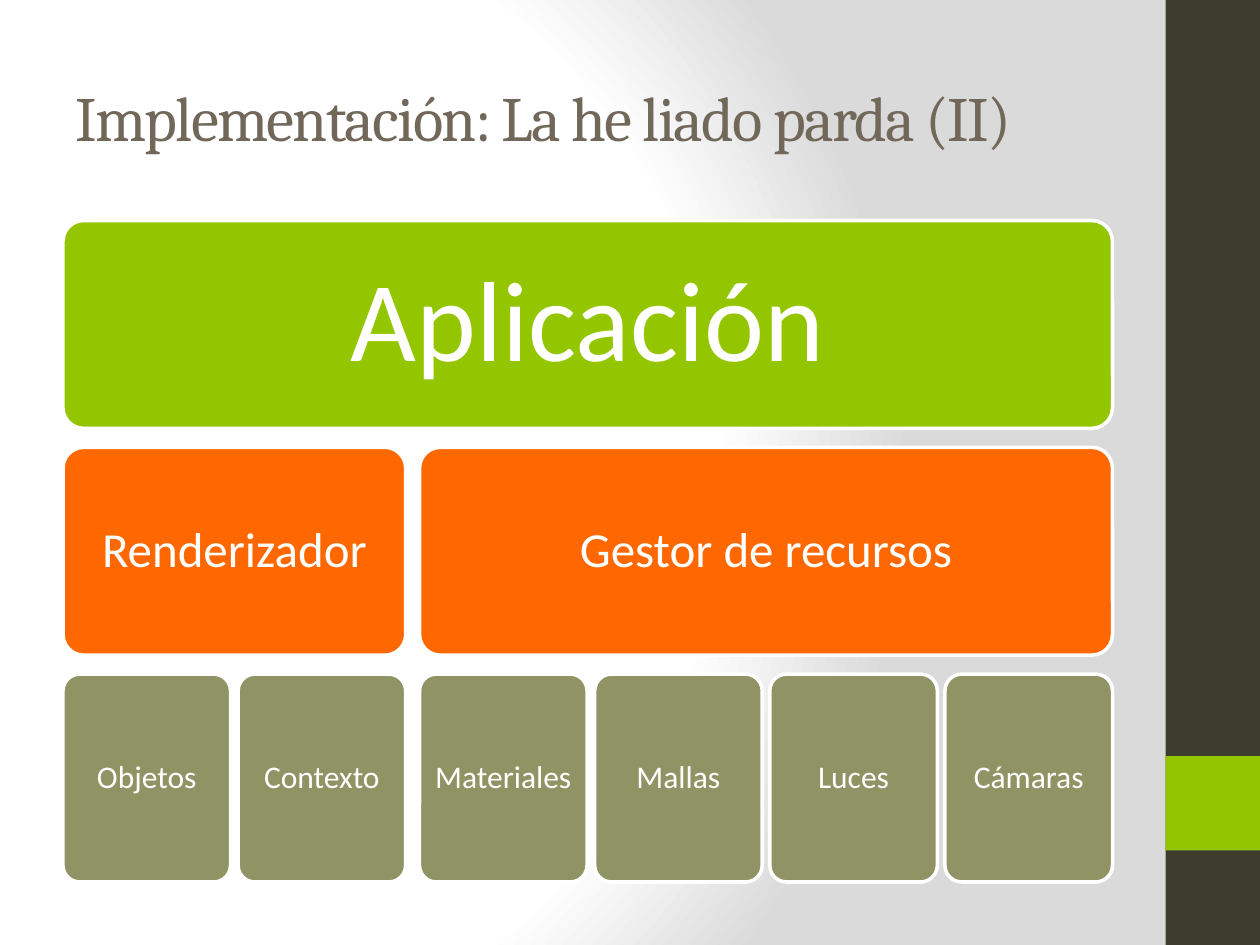
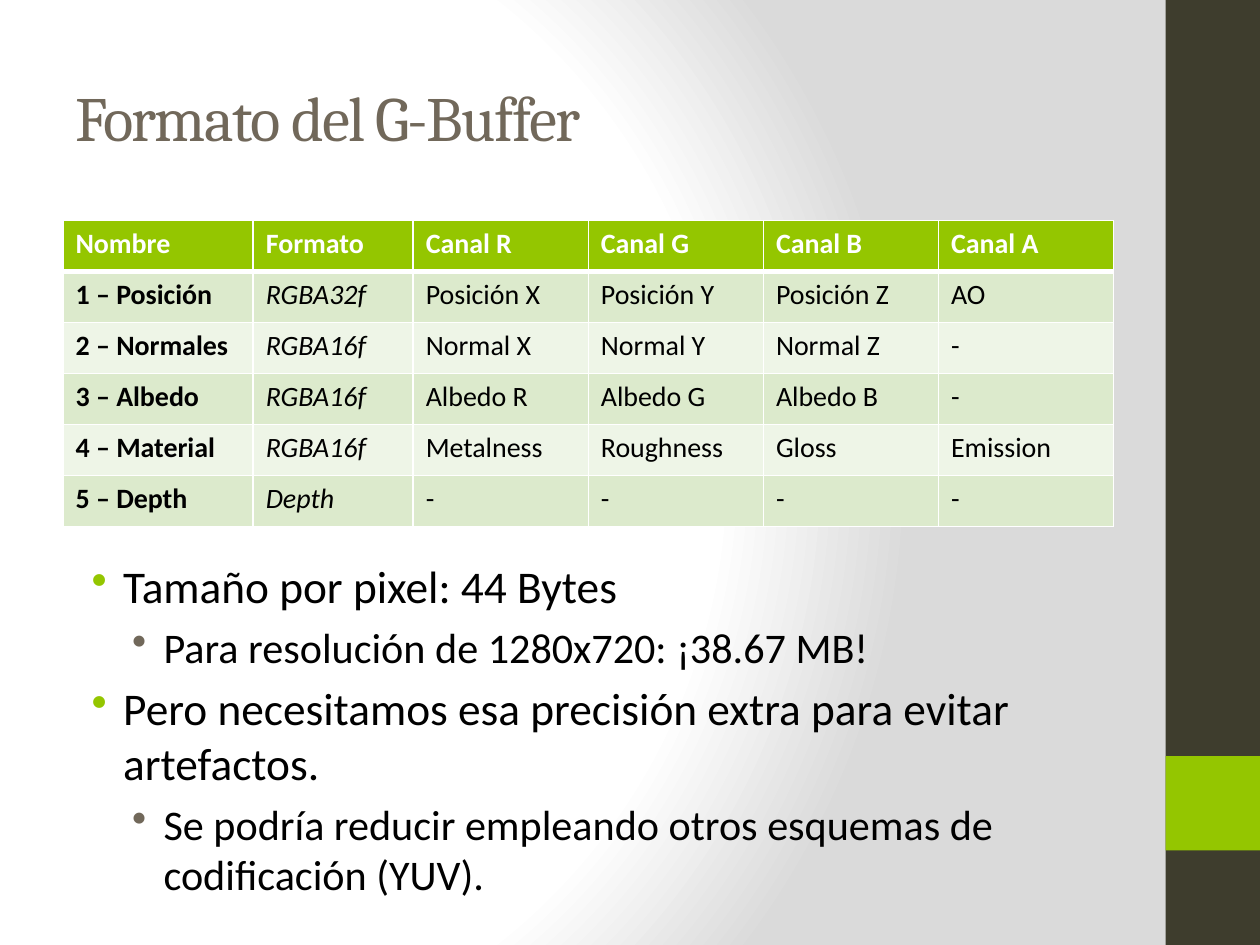
from dataclasses import dataclass

from lxml import etree
from pptx import Presentation
from pptx import util as u
from pptx.dml.color import RGBColor
from pptx.enum import shapes, text
from pptx.oxml import parse_xml
from pptx.oxml.ns import nsdecls, qn

WHITE, BLACK, SHADE = "FFFFFF", "000000", "DADADA"
DARK, GREEN, ORANGE, OLIVE, TAUPE = "3E3D2D", "94C600", "FF6700", "909465", "71685A"
STRIPES = ("DCEACC", "EEF5E7")
BODY_FONT, TITLE_FONT = "Calibri", "Cambria"
LEFT, TOP, WIDTH = 0.5, 1.75, 8.33


@dataclass(frozen=True)
class Box:
    left: float
    top: float
    width: float
    height: float

    def emu(self) -> list:
        return [u.Inches(v) for v in (self.left, self.top, self.width, self.height)]


@dataclass(frozen=True)
class Tier:
    """Look shared by all blocks on one level of the architecture."""
    fill: str
    size: float
    inset: float


@dataclass(frozen=True)
class Block:
    label: str
    tier: int
    first: int
    last: int


@dataclass(frozen=True)
class Bullet:
    indent: float
    size: float
    color: str


BANDS = ((Box(9.25, 0, 0.75, 7.5), DARK), (Box(9.25, 6, 0.75, 0.75), GREEN))

TIERS = (Tier(GREEN, 65, 0.27), Tier(ORANGE, 28, 0.12), Tier(OLIVE, 18, 0.07))
TIER_HEIGHT, TIER_PITCH = 1.65, 1.8
MODULE_WIDTH, MODULE_PITCH, BRANCH_GAP = 1.33, 1.39, 0.05
RESOURCE_START = 2
MODULES = ("Objetos", "Contexto", "Materiales", "Mallas", "Luces", "Cámaras")
BLOCKS = [
    Block("Aplicación", 0, 0, 5),
    Block("Renderizador", 1, 0, 1),
    Block("Gestor de recursos", 1, RESOURCE_START, 5),
    *(Block(name, 2, i, i) for i, name in enumerate(MODULES)),
]

GBUFFER = (
    ("Nombre", "Formato", "Canal R", "Canal G", "Canal B", "Canal A"),
    ("1 – Posición", "RGBA32f", "Posición X", "Posición Y", "Posición Z", "AO"),
    ("2 – Normales", "RGBA16f", "Normal X", "Normal Y", "Normal Z", "-"),
    ("3 – Albedo", "RGBA16f", "Albedo R", "Albedo G", "Albedo B", "-"),
    ("4 – Material", "RGBA16f", "Metalness", "Roughness", "Gloss", "Emission"),
    ("5 – Depth", "Depth", "-", "-", "-", "-"),
)
COLUMN_WIDTHS = (1.51, 1.27, 1.39, 1.39, 1.39, 1.39)
TABLE_HEIGHT = 2.43

BULLETS = (Bullet(0.38, 25.9, GREEN), Bullet(0.7, 24.1, TAUPE))
REMARKS = (
    (0, "Tamaño por pixel: 44 Bytes"),
    (1, "Para resolución de 1280x720: ¡38.67 MB!"),
    (0, "Pero necesitamos esa precisión extra para evitar artefactos."),
    (1, "Se podría reducir empleando otros esquemas de codificación (YUV)."),
)


def rgb(color: str) -> RGBColor:
    return RGBColor.from_string(color)


def set_all(target, values: dict) -> None:
    for name, value in values.items():
        setattr(target, name, value)


def write(paragraph, words: str, size: float, color: str, font: str = BODY_FONT, **style):
    run = paragraph.add_run()
    run.text = words
    set_all(run.font, {"name": font, "size": u.Pt(size), **style})
    run.font.color.rgb = rgb(color)
    return run


def add_filled(slide, kind, box: Box, fill: str):
    shape = slide.shapes.add_shape(kind, *box.emu())
    shape.shadow.inherit = False
    shape.fill.solid()
    shape.fill.fore_color.rgb = rgb(fill)
    shape.line.fill.background()
    return shape


def add_text_frame(slide, box: Box, anchor):
    frame = slide.shapes.add_textbox(*box.emu()).text_frame
    set_all(frame, {"word_wrap": True, "vertical_anchor": anchor})
    return frame


def paint_background(slide) -> None:
    """Radial white-to-grey gradient centred left of the middle."""
    slide.background.fill.solid()
    stops = "".join(
        f'<a:gs pos="{percent * 1000}"><a:srgbClr val="{color}"/></a:gs>'
        for percent, color in ((0, WHITE), (75, WHITE), (100, SHADE)))
    gradient = parse_xml(
        f'<a:gradFill {nsdecls("a")} rotWithShape="1"><a:gsLst>{stops}</a:gsLst>'
        '<a:path path="circle"><a:fillToRect l="20000" t="50000" r="100000" b="50000"/>'
        '</a:path></a:gradFill>')
    properties = slide.element.find(".//" + qn("p:bgPr"))
    properties.replace(properties.find(qn("a:solidFill")), gradient)


def add_titled_slide(deck, title: str):
    slide = deck.slides.add_slide(deck.slide_layouts[6])
    paint_background(slide)
    for box, fill in BANDS:
        add_filled(slide, shapes.MSO_SHAPE.RECTANGLE, box, fill)
    frame = add_text_frame(slide, Box(LEFT, 0.3, WIDTH, 1.25), text.MSO_ANCHOR.MIDDLE)
    run = write(frame.paragraphs[0], title, 36, TAUPE, TITLE_FONT)
    run.font._element.set("spc", "-100")
    return slide


def module_left(index: int) -> float:
    return LEFT + index * MODULE_PITCH + (BRANCH_GAP if index >= RESOURCE_START else 0)


def add_block(slide, block: Block) -> None:
    tier = TIERS[block.tier]
    left = module_left(block.first)
    box = Box(left, TOP + block.tier * TIER_PITCH,
              module_left(block.last) + MODULE_WIDTH - left, TIER_HEIGHT)
    shape = add_filled(slide, shapes.MSO_SHAPE.ROUNDED_RECTANGLE, box, tier.fill)
    shape.adjustments[0] = 0.1
    shape.line.color.rgb = rgb(WHITE)
    shape.line.width = u.Pt(2)
    margins = {f"margin_{side}": u.Inches(tier.inset)
               for side in ("left", "top", "right", "bottom")}
    set_all(shape.text_frame, {
        "word_wrap": True, "vertical_anchor": text.MSO_ANCHOR.MIDDLE, **margins})
    paragraph = shape.text_frame.paragraphs[0]
    set_all(paragraph, {"alignment": text.PP_ALIGN.CENTER, "line_spacing": 0.9})
    write(paragraph, block.label, tier.size, WHITE)


def add_borders(cell, row: int) -> None:
    """White cell borders, thicker between the header and the first row."""
    widths = {"lnL": 1, "lnR": 1, "lnT": 3 if row == 1 else 1, "lnB": 3 if row == 0 else 1}
    properties = cell._tc.get_or_add_tcPr()
    for side, points in widths.items():
        line = etree.SubElement(properties, qn(f"a:{side}"), w=str(u.Pt(points)))
        fill = etree.SubElement(line, qn("a:solidFill"))
        etree.SubElement(fill, qn("a:srgbClr"), val=WHITE)


def add_gbuffer_table(slide) -> None:
    box = Box(LEFT, TOP, WIDTH, TABLE_HEIGHT)
    table = slide.shapes.add_table(len(GBUFFER), len(COLUMN_WIDTHS), *box.emu()).table
    for column, width in zip(table.columns, COLUMN_WIDTHS):
        column.width = u.Inches(width)
    for r, values in enumerate(GBUFFER):
        header = r == 0
        for c, value in enumerate(values):
            cell = table.cell(r, c)
            add_borders(cell, r)
            cell.fill.solid()
            cell.fill.fore_color.rgb = rgb(GREEN if header else STRIPES[(r - 1) % 2])
            write(cell.text_frame.paragraphs[0], value, 16, WHITE if header else BLACK,
                  bold=header or c == 0, italic=not header and c == 1)


def add_remarks(slide) -> None:
    frame = add_text_frame(slide, Box(LEFT, 4.38, WIDTH, 2.61), text.MSO_ANCHOR.TOP)
    for i, (level, words) in enumerate(REMARKS):
        bullet = BULLETS[level]
        paragraph = frame.add_paragraph() if i else frame.paragraphs[0]
        set_all(paragraph, {"level": level, "space_before": u.Pt(bullet.size * 0.2)})
        properties = paragraph._p.get_or_add_pPr()
        properties.set("marL", str(u.Inches(bullet.indent)))
        properties.set("indent", str(u.Inches(-0.25)))
        color = etree.SubElement(properties, qn("a:buClr"))
        etree.SubElement(color, qn("a:srgbClr"), val=bullet.color)
        etree.SubElement(properties, qn("a:buChar"), char="•")
        write(paragraph, words, bullet.size, BLACK)


def main() -> None:
    deck = Presentation()
    set_all(deck, {"slide_width": u.Inches(10), "slide_height": u.Inches(7.5)})

    architecture = add_titled_slide(deck, "Implementación: La he liado parda (II)")
    for block in BLOCKS:
        add_block(architecture, block)

    gbuffer = add_titled_slide(deck, "Formato del G-Buffer")
    add_gbuffer_table(gbuffer)
    add_remarks(gbuffer)

    deck.save("out.pptx")


if __name__ == "__main__":
    main()
